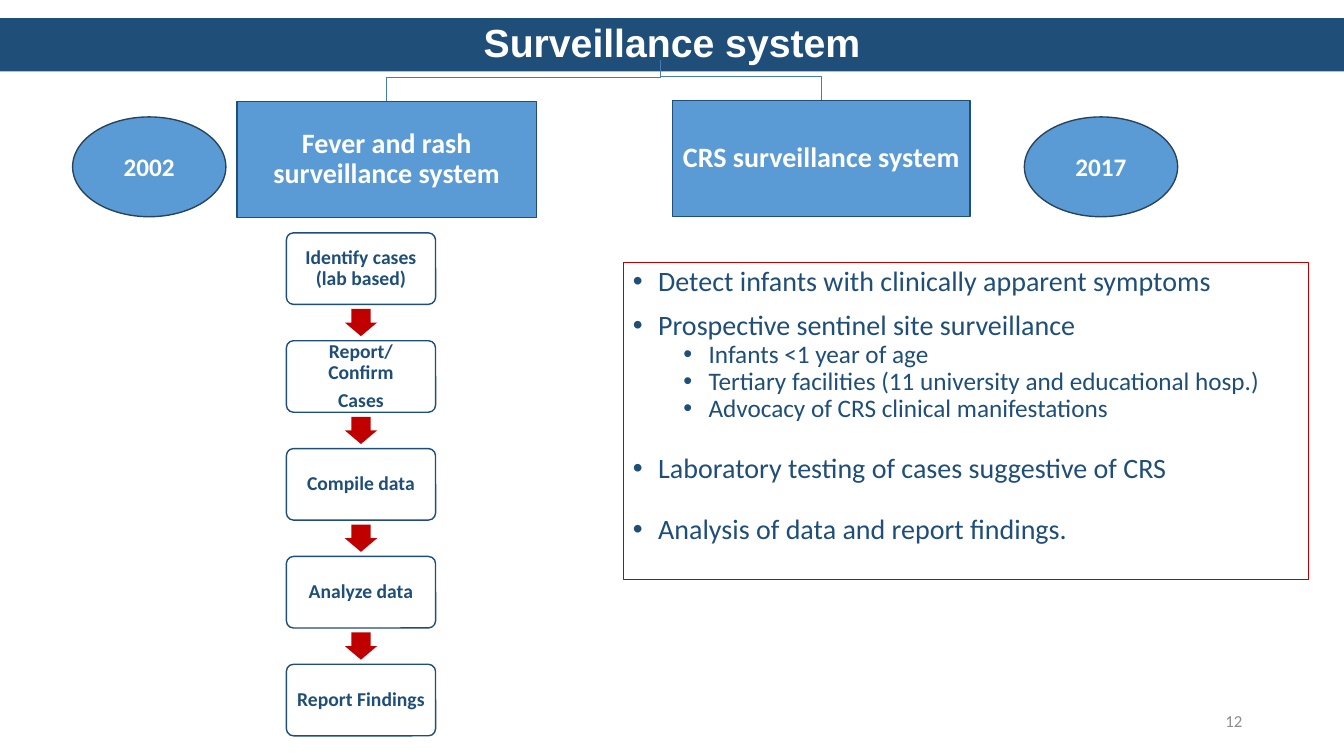
from dataclasses import dataclass
from typing import Optional

from lxml import etree
from pptx import Presentation
from pptx.dml.color import RGBColor
from pptx.enum.shapes import MSO_SHAPE
from pptx.enum.text import MSO_ANCHOR, PP_ALIGN
from pptx.oxml.ns import qn
from pptx.util import Inches, Pt

RECT = MSO_SHAPE.RECTANGLE
ROUNDED = MSO_SHAPE.ROUNDED_RECTANGLE
ELLIPSE = MSO_SHAPE.OVAL
DOWN_ARROW = MSO_SHAPE.DOWN_ARROW
MIDDLE, TOP = MSO_ANCHOR.MIDDLE, MSO_ANCHOR.TOP
LEFT, CENTER, RIGHT = PP_ALIGN.LEFT, PP_ALIGN.CENTER, PP_ALIGN.RIGHT


@dataclass(frozen=True)
class Theme:
    navy: str = "1F4E79"
    blue: str = "5B9BD5"
    ellipse_edge: str = "28445D"
    branch: str = "497CAB"
    red: str = "C00000"
    white: str = "FFFFFF"
    gray: str = "8C8C8C"
    title_font: str = "Arial"
    body_font: str = "Calibri"
    title_size: int = 28
    heading_size: int = 20
    detail_size: int = 18
    step_size: int = 14
    number_size: int = 12


THEME = Theme()


@dataclass(frozen=True)
class Box:
    left: float
    top: float
    width: float
    height: float

    def emu(self) -> tuple:
        return tuple(Inches(v) for v in (self.left, self.top, self.width, self.height))


@dataclass(frozen=True)
class Panel:
    kind: int
    box: Box
    fill: Optional[str]
    edge: Optional[str] = None
    edge_width: float = 1


@dataclass(frozen=True)
class TextStyle:
    size: int
    color: str
    bold: bool = True
    font: str = THEME.body_font
    align: int = CENTER
    spacing: float = 0.9


@dataclass(frozen=True)
class Bullet:
    text: str
    level: int = 0
    before: int = 10
    after: int = 0


HEADING = TextStyle(THEME.heading_size, THEME.white)
YEAR = TextStyle(THEME.detail_size, THEME.white, spacing=1.0)
STEP = TextStyle(THEME.step_size, THEME.navy)
BULLET_STYLES = (
    TextStyle(THEME.heading_size, THEME.navy, bold=False, align=LEFT),
    TextStyle(THEME.detail_size, THEME.navy, bold=False, align=LEFT),
)
BULLET_INDENTS = (0.25, 0.75)

TITLE_BAR = Panel(RECT, Box(0, 0.18, 13.33, 0.53), THEME.navy)
SYSTEMS = (
    ("Fever and rash surveillance system", Box(2.35, 1.01, 2.97, 1.15)),
    ("CRS surveillance system", Box(6.67, 1, 2.95, 1.15)),
)
YEARS = (("2002", 0.72), ("2017", 10.16))
STEPS = (
    ("Identify cases (lab based)",),
    ("Report/Confirm", "Cases"),
    ("Compile data",),
    ("Analyze data",),
    ("Report Findings",),
)
STEP_LEFT, STEP_TOP, STEP_PITCH = 2.84, 2.31, 1.07
STEP_WIDTH, STEP_HEIGHT = 1.48, 0.71
ARROW_WIDTH, ARROW_HEIGHT = 0.32, 0.27
BRANCH_X, BRANCH_TOP, BRANCH_DROP = 6.55, 0.6, 0.24

CRS_PANEL = Panel(RECT, Box(6.18, 2.6, 6.8, 3.15), None, THEME.red, 0.75)
CRS_BULLETS = (
    Bullet("Detect infants with clinically apparent symptoms"),
    Bullet("Prospective sentinel site surveillance"),
    Bullet("Infants <1 year of age", 1, 0),
    Bullet("Tertiary facilities (11 university and educational hosp.)", 1, 0),
    Bullet("Advocacy of CRS clinical manifestations", 1, 0, 12),
    Bullet("Laboratory testing of cases suggestive of CRS", after=12),
    Bullet("Analysis of data and report findings.", after=12),
)


def paint(shape, fill: Optional[str], edge: Optional[str], edge_width: float) -> None:
    shape.shadow.inherit = False
    if fill:
        shape.fill.solid()
        shape.fill.fore_color.rgb = RGBColor.from_string(fill)
    else:
        shape.fill.background()
    if edge:
        shape.line.color.rgb = RGBColor.from_string(edge)
        shape.line.width = Pt(edge_width)
    else:
        shape.line.fill.background()


def add_panel(slide, panel: Panel):
    shape = slide.shapes.add_shape(panel.kind, *panel.box.emu())
    paint(shape, panel.fill, panel.edge, panel.edge_width)
    return shape


def write_paragraph(paragraph, text: str, style: TextStyle) -> None:
    run = paragraph.add_run()
    run.text = text
    paragraph.alignment = style.align
    paragraph.line_spacing = style.spacing
    font_format = {"name": style.font, "size": Pt(style.size), "bold": style.bold}
    for attribute, value in font_format.items():
        setattr(run.font, attribute, value)
    run.font.color.rgb = RGBColor.from_string(style.color)


def prepare_frame(shape, anchor: int = MIDDLE, inset: Optional[float] = None):
    frame = shape.text_frame
    frame.word_wrap = True
    frame.vertical_anchor = anchor
    if inset is not None:
        for side in ("left", "top", "right", "bottom"):
            setattr(frame, f"margin_{side}", Inches(inset))
    return frame


def write_lines(shape, lines: tuple, style: TextStyle, inset: Optional[float] = None) -> None:
    """Fill a shape with one paragraph per line, spaced by 35% of the type size."""
    frame = prepare_frame(shape, inset=inset)
    for index, line in enumerate(lines):
        paragraph = frame.add_paragraph() if index else frame.paragraphs[0]
        write_paragraph(paragraph, line, style)
        if index < len(lines) - 1:
            paragraph.space_after = Pt(round(style.size * 0.35))


def write_bullets(shape, bullets: tuple) -> None:
    frame = prepare_frame(shape, TOP)
    for index, bullet in enumerate(bullets):
        paragraph = frame.add_paragraph() if index else frame.paragraphs[0]
        write_paragraph(paragraph, bullet.text, BULLET_STYLES[bullet.level])
        paragraph.level = bullet.level
        paragraph.space_before = Pt(bullet.before)
        paragraph.space_after = Pt(bullet.after)
        properties = paragraph._p.get_or_add_pPr()
        properties.set("marL", str(Inches(BULLET_INDENTS[bullet.level])))
        properties.set("indent", str(Inches(-0.25)))
        etree.SubElement(properties, qn("a:buFont")).set("typeface", "Arial")
        etree.SubElement(properties, qn("a:buChar")).set("char", "•")


def add_branch(slide, system: Box) -> None:
    """Draw the bent line from the title down to the top centre of a system."""
    center, bend = system.left + system.width / 2, system.top - BRANCH_DROP
    points = [(BRANCH_X, bend), (center, bend), (center, system.top)]
    builder = slide.shapes.build_freeform(Inches(BRANCH_X), Inches(BRANCH_TOP))
    builder.add_line_segments([(Inches(x), Inches(y)) for x, y in points], close=False)
    paint(builder.convert_to_shape(), None, THEME.branch, 1)


def add_step(slide, index: int, lines: tuple) -> None:
    top = STEP_TOP + index * STEP_PITCH
    box = Box(STEP_LEFT, top, STEP_WIDTH, STEP_HEIGHT)
    step = add_panel(slide, Panel(ROUNDED, box, THEME.white, THEME.navy))
    step.adjustments[0] = 0.1
    write_lines(step, lines, STEP, 0.08)
    if index < len(STEPS) - 1:
        arrow_left = STEP_LEFT + (STEP_WIDTH - ARROW_WIDTH) / 2
        arrow_top = top + (STEP_HEIGHT + STEP_PITCH - ARROW_HEIGHT) / 2
        arrow_box = Box(arrow_left, arrow_top, ARROW_WIDTH, ARROW_HEIGHT)
        arrow = add_panel(slide, Panel(DOWN_ARROW, arrow_box, THEME.red))
        arrow.adjustments[0], arrow.adjustments[1] = 0.6, 0.5


def main() -> None:
    deck = Presentation()
    deck.slide_width, deck.slide_height = Inches(13.33), Inches(7.5)
    slide = deck.slides.add_slide(deck.slide_layouts[6])

    page_number = slide.shapes.add_textbox(*Box(9.42, 6.95, 3, 0.4).emu())
    number_style = TextStyle(THEME.number_size, THEME.gray, bold=False, align=RIGHT, spacing=1.0)
    write_lines(page_number, ("12",), number_style)

    title_style = TextStyle(THEME.title_size, THEME.white, font=THEME.title_font)
    write_lines(add_panel(slide, TITLE_BAR), ("Surveillance system",), title_style)

    for name, box in SYSTEMS:
        add_branch(slide, box)
        system = add_panel(slide, Panel(RECT, box, THEME.blue, THEME.navy))
        write_lines(system, (name,), HEADING, 0.01)
    for index, lines in enumerate(STEPS):
        add_step(slide, index, lines)
    write_bullets(add_panel(slide, CRS_PANEL), CRS_BULLETS)
    for year, left in YEARS:
        box = Box(left, 1.16, 1.52, 0.99)
        ellipse = add_panel(slide, Panel(ELLIPSE, box, THEME.blue, THEME.ellipse_edge))
        write_lines(ellipse, (year,), YEAR)

    deck.save("out.pptx")


if __name__ == "__main__":
    main()
